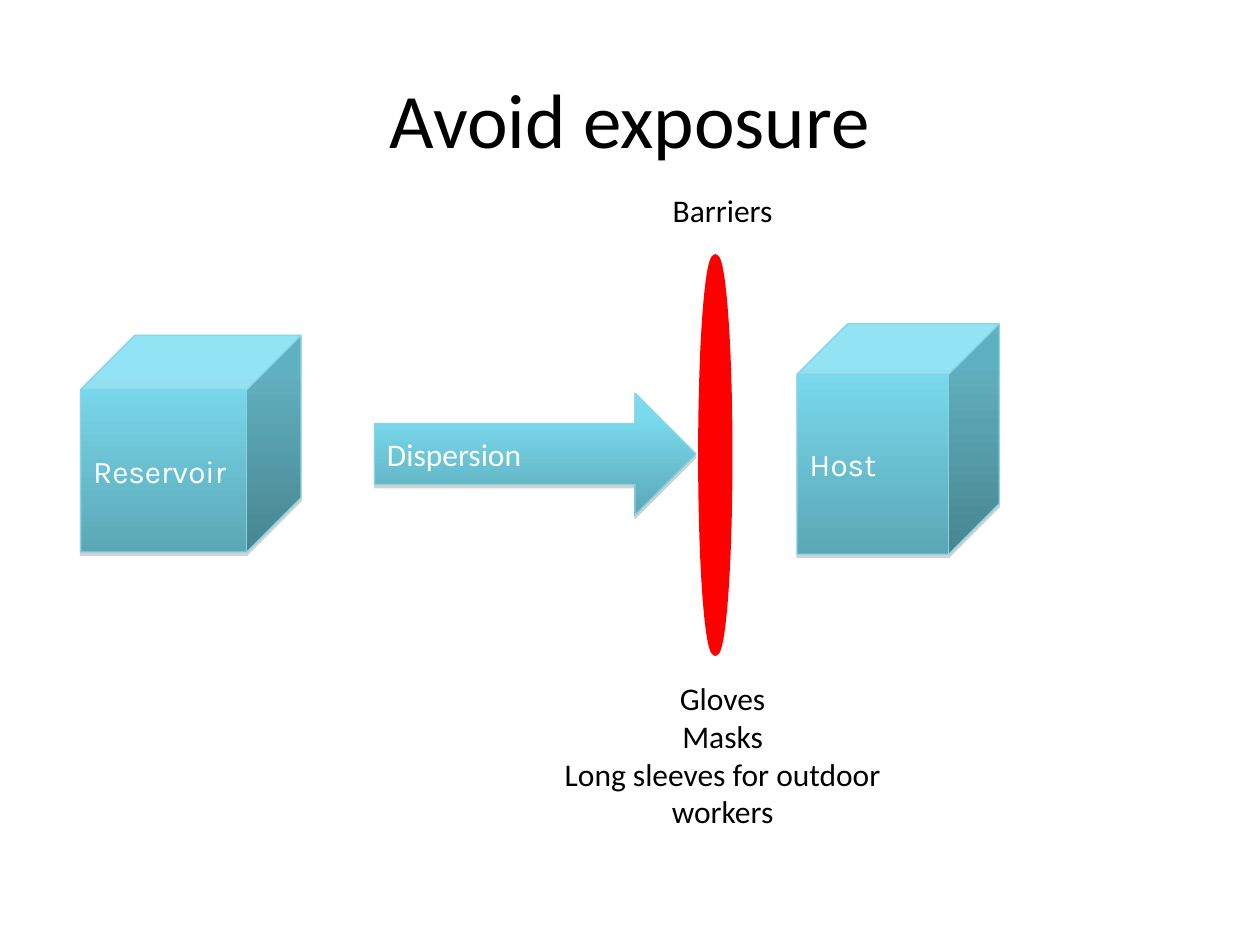
from dataclasses import dataclass

from lxml.etree import SubElement
from pptx import Presentation
from pptx.dml.color import RGBColor
from pptx.enum.shapes import MSO_SHAPE as Preset
from pptx.enum.text import MSO_ANCHOR as Anchor, PP_ALIGN as Align
from pptx.oxml import parse_xml
from pptx.oxml.ns import nsdecls, qn
from pptx.util import Inches, Pt


@dataclass(frozen=True)
class Theme:
    """Colours, fonts and type sizes of the deck."""
    ink: str = "000000"
    light: str = "FFFFFF"
    edge: str = "86D5E4"
    barrier: str = "FF0000"
    shade: str = "808080"
    gradient: tuple = ((0, "77DDF0"), (20, "79DAED"), (100, "5BA7B5"))
    font: str = "Calibri"
    cube_font: str = "Karla"
    title_size: int = 44
    body_size: int = 18


@dataclass(frozen=True)
class Box:
    """A rectangle in inches."""
    left: float
    top: float
    width: float
    height: float

    def share(self, left, top, width, height):
        """Return the box that covers the given shares of this one."""
        return Box(self.left + left * self.width, self.top + top * self.height,
                   width * self.width, height * self.height)

    def emu(self):
        """Return left, top, width and height as lengths."""
        return [Inches(side) for side in (self.left, self.top, self.width, self.height)]


THEME = Theme()
PAGE = Box(0, 0, 10, 7.5)


def write(frame, lines, size, font, color, align):
    """Fill a text frame with one paragraph per line."""
    frame.word_wrap = True
    frame.text = "\n".join(lines)
    for para in frame.paragraphs:
        para.alignment = align
        para.font.size = Pt(size)
        para.font.name = font
        para.font.color.rgb = RGBColor.from_string(color)


def outline(shape, color, width):
    """Give a shape a plain line and no inherited shadow."""
    shape.line.color.rgb = RGBColor.from_string(color)
    shape.line.width = Pt(width)
    shape.shadow.inherit = False


def shade(shape):
    """Add the theme's gradient and a short drop shadow to a shape."""
    shape.fill.gradient()
    shape.fill.gradient_angle = 270
    stops = shape.element.spPr.find(".//" + qn("a:gsLst"))
    stops.clear()
    for percent, color in THEME.gradient:
        stop = SubElement(stops, qn("a:gs"), pos=str(percent * 1000))
        SubElement(stop, qn("a:srgbClr"), val=color)
    shape.element.spPr.find(qn("a:effectLst")).append(parse_xml(
        f'<a:outerShdw {nsdecls("a")} blurRad="0" dist="{Pt(1.8)}" dir="5400000" '
        f'rotWithShape="0"><a:srgbClr val="{THEME.shade}">'
        '<a:alpha val="35000"/></a:srgbClr></a:outerShdw>'))


def add_block(page, box, preset, label, font):
    """Place a shaded shape with its label."""
    block = page.shapes.add_shape(preset, *box.emu())
    outline(block, THEME.edge, 0.75)
    shade(block)
    block.text_frame.vertical_anchor = Anchor.MIDDLE
    write(block.text_frame, [label], THEME.body_size, font, THEME.light, Align.LEFT)


def add_caption(page, box, lines):
    """Place centred lines of text."""
    caption = page.shapes.add_textbox(*box.emu())
    write(caption.text_frame, lines, THEME.body_size, THEME.font, THEME.ink, Align.CENTER)


def add_title(page, box, text):
    """Place and format the title placeholder."""
    title = page.shapes.title
    title.left, title.top, title.width, title.height = box.emu()
    title.text_frame.vertical_anchor = Anchor.MIDDLE
    write(title.text_frame, [text], THEME.title_size, THEME.font, THEME.ink, Align.CENTER)


def add_route(page, box):
    """Place the reservoir, the host and the arrow between them."""
    add_block(page, box.share(0, 0.05, 0.24, 0.94), Preset.CUBE, "Reservoir", THEME.cube_font)
    add_block(page, box.share(0.78, 0, 0.22, 1), Preset.CUBE, "Host", THEME.cube_font)
    add_block(page, box.share(0.32, 0.3, 0.35, 0.53), Preset.RIGHT_ARROW, "Dispersion",
              THEME.font)


def add_barrier(page, box):
    """Place the barrier with its heading above and examples below."""
    barrier = page.shapes.add_shape(Preset.OVAL, *box.share(0.44, 0.11, 0.08, 0.61).emu())
    barrier.fill.solid()
    barrier.fill.fore_color.rgb = RGBColor.from_string(THEME.barrier)
    outline(barrier, THEME.barrier, 3)
    add_caption(page, box.share(0, 0, 1, 0.08), ["Barriers"])
    add_caption(page, box.share(0, 0.75, 1, 0.25),
                ["Gloves", "Masks", "Long sleeves for outdoor workers"])


def main():
    """Build and save the deck."""
    deck = Presentation()
    deck.slide_width, deck.slide_height = PAGE.emu()[2:]
    page = deck.slides.add_slide(deck.slide_layouts[5])
    add_title(page, PAGE.share(0.05, 0.04, 0.9, 0.17), "Avoid exposure")
    add_route(page, Box(0.64, 2.57, 7.29, 1.83))
    add_barrier(page, Box(4.29, 1.47, 2.89, 5.16))
    deck.save("out.pptx")


if __name__ == "__main__":
    main()
